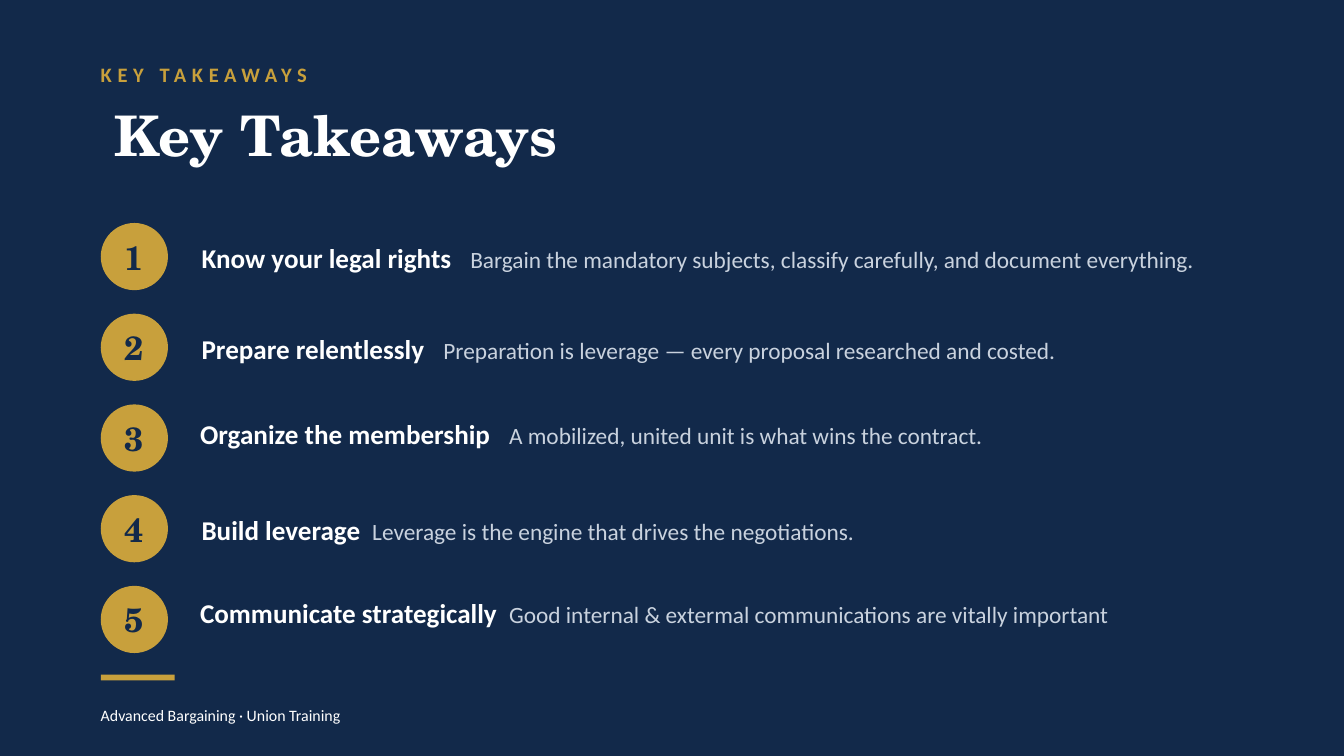
from dataclasses import dataclass

from lxml.etree import SubElement
from pptx import Presentation
from pptx.dml.color import RGBColor as Rgb
from pptx.enum.shapes import MSO_SHAPE as Kind
from pptx.enum.text import MSO_ANCHOR as Anchor, MSO_AUTO_SIZE as Fit, PP_ALIGN as Align
from pptx.oxml.ns import qn
from pptx.util import Inches, Pt


@dataclass(frozen=True)
class Theme:
    """Colours, fonts and type sizes of the slide."""
    navy: str = "12294A"
    gold: str = "C8A03C"
    white: str = "FFFFFF"
    mist: str = "C9D2DE"
    serif: str = "TeX Gyre Schola"
    sans: str = "Calibri"
    title: float = 30
    disc: float = 18
    head: float = 14.5
    note: float = 12.5
    label: float = 11
    foot: float = 8.5


THEME = Theme()
WIDTH, HEIGHT = Inches(10), Inches(5.625)
LEFT, WIDE = 7.5, 85
TOP, PITCH = 29.5, 12
ROW_X, ROW_W, ROW_H = 15, 79, 10.67
LOOSE_X, LOOSE_H = 13.9, 6.22

ROWS = [
    ("Know your legal rights", "Bargain the mandatory subjects, classify carefully, and document everything.", 2.0, None),
    ("Prepare relentlessly", "Preparation is leverage — every proposal researched and costed.", 1.8, None),
    ("Organize the membership", "A mobilized, united unit is what wins the contract.", 2.3, (54.4, 63.9)),
    ("Build leverage", "Leverage is the engine that drives the negotiations.", 1.27, None),
    ("Communicate strategically", "Good internal & extermal communications are vitally important", 2.3, (78.04, 80.1)),
]


def area(x, y, w, h):
    """Turn percentages of the slide into left, top, width and height."""
    return [int(part * size / 100) for part, size in zip((x, y, w, h), (WIDTH, HEIGHT) * 2)]


def write(para, text, size, color, font=THEME.sans, bold=False, track=None):
    """Add a formatted run to a paragraph."""
    run = para.add_run()
    run.text = text
    run.font.size = Pt(size)
    run.font.name = font
    run.font.bold = bold
    run.font.color.rgb = Rgb.from_string(color)
    if track:
        run.font._element.set("spc", str(track * 100))


def setup(frame, pad=True, anchor=Anchor.MIDDLE, align=Align.LEFT):
    """Prepare a text frame and return its first paragraph."""
    frame.word_wrap = True
    frame.auto_size = Fit.NONE
    frame.vertical_anchor = anchor
    if not pad:
        frame.margin_left = frame.margin_right = frame.margin_top = frame.margin_bottom = 0
    para = frame.paragraphs[0]
    para.alignment = align
    return para


def add_text(slide, place, pad=False, anchor=Anchor.MIDDLE):
    """Add a text box and return its first paragraph."""
    return setup(slide.shapes.add_textbox(*area(*place)).text_frame, pad, anchor)


def add_shape(slide, kind, place):
    """Add a flat gold shape."""
    shape = slide.shapes.add_shape(kind, *area(*place))
    shape.shadow.inherit = False
    shape.fill.solid()
    shape.fill.fore_color.rgb = Rgb.from_string(THEME.gold)
    shape.line.fill.background()
    return shape


def add_title(slide, text):
    """Place and format the title placeholder."""
    title = slide.shapes.title
    title.left, title.top, title.width, title.height = area(LEFT, 9.78, WIDE, 16)
    write(setup(title.text_frame), text, THEME.title, THEME.white, font=THEME.serif, bold=True)


def add_disc(slide, index):
    """Add a numbered disc."""
    disc = add_shape(slide, Kind.OVAL, (LEFT, TOP + index * PITCH, 5, 8.89))
    para = setup(disc.text_frame, pad=False, align=Align.CENTER)
    write(para, str(index + 1), THEME.disc, THEME.navy, font=THEME.serif, bold=True)


def add_row(slide, index, head, note, stop, loose):
    """Add a takeaway whose note starts at a tab stop."""
    if loose:
        top, wide = loose
        para = add_text(slide, (LOOSE_X, top, wide, LOOSE_H), pad=True, anchor=Anchor.TOP)
    else:
        para = add_text(slide, (ROW_X, 28.8 + index * PITCH, ROW_W, ROW_H))
    tabs = SubElement(para._p.get_or_add_pPr(), qn("a:tabLst"))
    SubElement(tabs, qn("a:tab"), pos=str(Inches(stop)), algn="l")
    write(para, head + "\t", THEME.head, THEME.white, bold=True)
    write(para, note, THEME.note, THEME.mist)


def main():
    """Build the slide and save it."""
    deck = Presentation()
    deck.slide_width, deck.slide_height = WIDTH, HEIGHT
    slide = deck.slides.add_slide(deck.slide_layouts[5])
    slide.background.fill.solid()
    slide.background.fill.fore_color.rgb = Rgb.from_string(THEME.navy)
    add_title(slide, "Key Takeaways")
    label = add_text(slide, (LEFT, 7.11, WIDE, 5.33))
    write(label, "KEY TAKEAWAYS", THEME.label, THEME.gold, bold=True, track=3)
    for index, row in enumerate(ROWS):
        add_disc(slide, index)
        add_row(slide, index, *row)
    add_shape(slide, Kind.RECTANGLE, (LEFT, 89.25, 5.5, 0.75))
    foot = add_text(slide, (LEFT, 91.02, WIDE, 7.11))
    write(foot, "Advanced Bargaining · Union Training", THEME.foot, THEME.white)
    deck.save("out.pptx")


if __name__ == "__main__":
    main()
